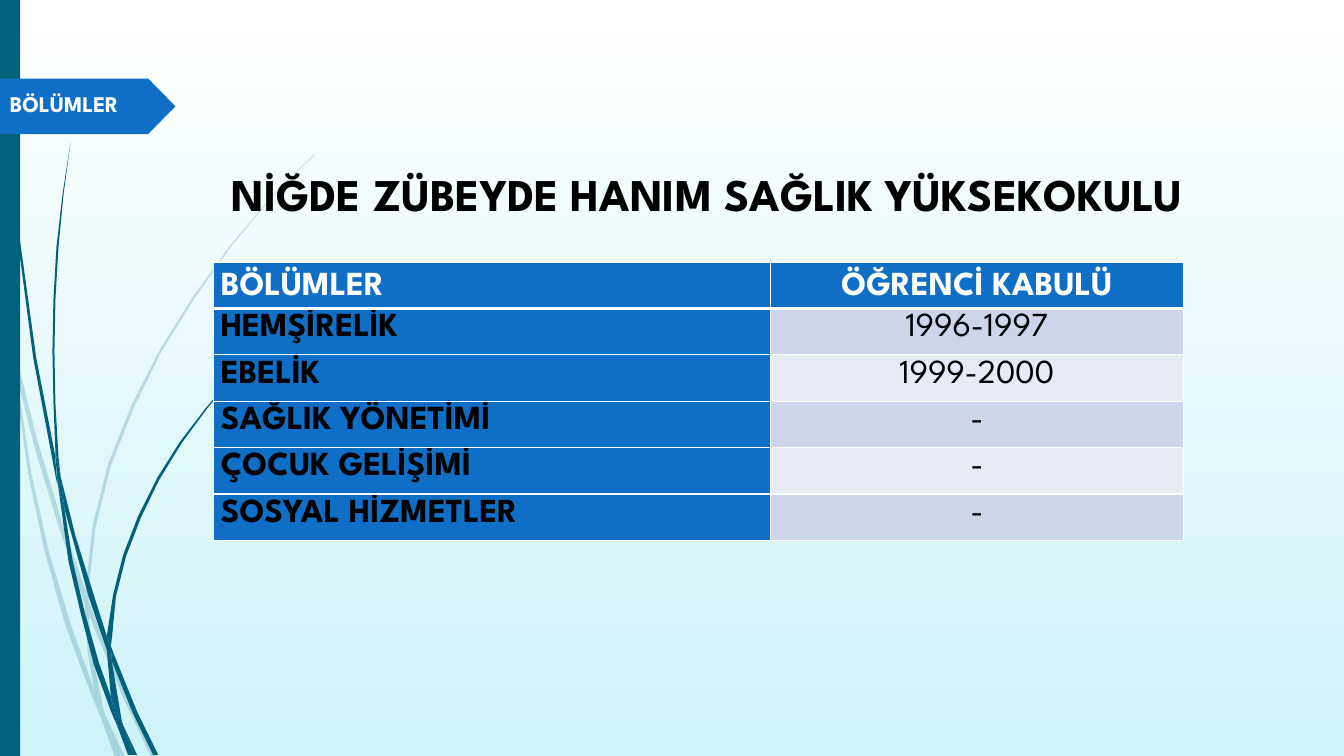
from lxml import etree
from pptx import Presentation
from pptx.dml.color import RGBColor
from pptx.enum.shapes import MSO_SHAPE
from pptx.enum.text import MSO_ANCHOR, PP_ALIGN
from pptx.oxml.ns import qn
from pptx.util import Inches, Pt

RECTANGLE = MSO_SHAPE.RECTANGLE
MIDDLE, TOP = MSO_ANCHOR.MIDDLE, MSO_ANCHOR.TOP
LEFT, CENTER, JUSTIFY = PP_ALIGN.LEFT, PP_ALIGN.CENTER, PP_ALIGN.JUSTIFY
FONT = "League Spartan"
TEAL, BLUE, WHITE, BLACK = "04617B", "0F6FC6", "FFFFFF", "000000"
BANDS = ("CCD5EA", "E7EBF5")

HEADER = ("BÖLÜMLER", "ÖĞRENCİ KABULÜ")
DEPARTMENTS = [
    ("HEMŞİRELİK ", "1996-1997"),
    ("EBELİK ", "1999-2000"),
    ("SAĞLIK YÖNETİMİ ", "-"),
    ("ÇOCUK GELİŞİMİ", "-"),
    ("SOSYAL HİZMETLER", "-"),
]

PALE_WISPS = [
    [(0.11, 3.5), (0.09, 3.22), (0, 2.82), (0, 2.99), (0.1, 3.44)],
    [(0.58, 5.22), (0.84, 5.99), (0.85, 5.86), (0.62, 5.2), (0.36, 4.33), (0.14, 3.45),
     (0.17, 3.76), (0.36, 4.5)],
    [(0.92, 6.07), (0.88, 5.96), (0.88, 6.1), (1.23, 6.94), (1.5, 7.51), (1.55, 7.51),
     (1.27, 6.92)],
    [(1.19, 7.51), (1.24, 7.51), (1.05, 7.11)],
    [(0.93, 6.83), (0.7, 6.19), (0.48, 5.45), (0.31, 4.69), (0.17, 3.76), (0.11, 3.5),
     (0.28, 4.7), (0.44, 5.46), (0.65, 6.21), (0.92, 6.93), (1.01, 7.14), (0.99, 7.07)],
    [(0.84, 5.99), (0.87, 6.46), (0.93, 6.83), (0.96, 6.92), (1.05, 7.11), (1.03, 7.06),
     (0.91, 6.46), (0.88, 6.1), (0.88, 6.08)],
    [(0.88, 5.84), (0.95, 5.22), (1.1, 4.62), (1.33, 4.04), (1.6, 3.49), (1.93, 2.96),
     (2.29, 2.45), (2.68, 1.98), (2.9, 1.75), (3.12, 1.54), (3.12, 1.53), (2.89, 1.75),
     (2.68, 1.97), (2.28, 2.44), (1.91, 2.95), (1.58, 3.48), (1.3, 4.03), (1.07, 4.61),
     (0.92, 5.21), (0.85, 5.84), (0.85, 5.86), (0.88, 5.96)],
    [(1.01, 7.14), (1.14, 7.51), (1.19, 7.51)],
    [(0.88, 6.08), (0.88, 6.1), (0.88, 5.96), (0.85, 5.86), (0.84, 5.99)],
    [(0.96, 6.92), (0.93, 6.83), (0.99, 7.07), (1.01, 7.14), (1.19, 7.51), (1.05, 7.11)],
]

DARK_WISPS = [
    [(0.07, 1.1), (0.17, 2.33), (0.33, 3.55), (0.56, 4.77), (0.57, 4.81), (0.55, 4.57),
     (0.55, 4.53), (0.36, 3.55), (0.19, 2.32), (0.08, 1.09), (0.05, 0.48), (0.04, 0),
     (0.03, 0), (0.04, 0.48)],
    [(0.88, 5.92), (1.06, 6.45), (1.06, 6.31), (0.93, 5.9), (0.75, 5.32), (0.6, 4.72),
     (0.64, 5.05)],
    [(1.13, 6.49), (1.1, 6.41), (1.11, 6.56), (1.32, 7.08), (1.52, 7.49), (1.57, 7.49),
     (1.36, 7.06)],
    [(1.1, 6.91), (0.98, 6.57), (0.84, 6.07), (0.72, 5.56), (0.64, 5.05), (0.57, 4.77),
     (0.68, 5.57), (0.8, 6.08), (0.93, 6.59), (1.11, 7.08), (1.17, 7.22), (1.16, 7.17)],
    [(0.6, 4.72), (0.58, 4.53), (0.55, 4.01), (0.54, 3.49), (0.55, 2.97), (0.58, 2.45),
     (0.63, 1.93), (0.7, 1.41), (0.62, 1.93), (0.56, 2.45), (0.53, 2.97), (0.52, 3.49),
     (0.53, 3.99), (0.55, 4.49)],
    [(1.33, 7.49), (1.36, 7.49), (1.22, 7.19)],
    [(0.57, 4.77), (0.64, 5.05), (0.6, 4.72), (0.55, 4.49), (0.55, 4.53)],
    [(1.11, 6.33), (1.15, 5.92), (1.25, 5.52), (1.4, 5.13), (1.58, 4.76), (1.8, 4.4),
     (2.05, 4.06), (2.31, 3.74), (2.45, 3.59), (2.61, 3.44), (2.6, 3.44), (2.45, 3.58),
     (2.31, 3.73), (2.04, 4.05), (1.78, 4.39), (1.56, 4.74), (1.37, 5.12), (1.22, 5.51),
     (1.12, 5.91), (1.06, 6.31), (1.1, 6.41)],
    [(1.17, 7.22), (1.27, 7.49), (1.31, 7.49)],
    [(1.06, 6.45), (1.1, 6.91), (1.16, 7.06), (1.22, 7.19), (1.21, 7.16), (1.11, 6.56),
     (1.09, 6.51)],
    [(1.06, 6.45), (1.09, 6.51), (1.11, 6.56), (1.1, 6.41), (1.06, 6.31)],
    [(1.16, 7.06), (1.1, 6.91), (1.16, 7.17), (1.17, 7.22), (1.3, 7.49), (1.33, 7.49),
     (1.22, 7.19)],
]


def color(hex_code):
    """Turn a hex string into a colour."""
    return RGBColor.from_string(hex_code)


def paint(sp, fill):
    """Give a shape a flat fill without line or shadow."""
    sp.shadow.inherit = False
    sp.fill.solid()
    sp.fill.fore_color.rgb = color(fill)
    sp.line.fill.background()


def write(p, text, size, ink, bold, align):
    """Write one run into a paragraph."""
    p.alignment = align
    r = p.add_run()
    r.text = text
    r.font.name, r.font.size, r.font.bold = FONT, Pt(size), bold
    r.font.color.rgb = color(ink)


def add_outline(s, x, y, points, fill):
    """Draw a closed, filled outline offset by x and y."""
    spots = [(Inches(x + px), Inches(y + py)) for px, py in points]
    builder = s.shapes.build_freeform(*spots[0])
    builder.add_line_segments(spots[1:], close=True)
    sp = builder.convert_to_shape()
    paint(sp, fill)
    return sp


def add_wisps(s, x, y, wisps, opacity=100):
    """Draw a bundle of blades of grass."""
    for points in wisps:
        sp = add_outline(s, x, y, points, TEAL)
        if opacity < 100:
            clr = sp.element.spPr.find(qn("a:solidFill"))[0]
            etree.SubElement(clr, qn("a:alpha"), val=str(opacity * 1000))


def add_text(s, x, y, w, h, text, size, ink, align):
    """Place a line of bold text in a box."""
    tf = s.shapes.add_textbox(Inches(x), Inches(y), Inches(w), Inches(h)).text_frame
    tf.word_wrap = True
    tf.vertical_anchor = MIDDLE
    write(tf.paragraphs[0], text, size, ink, True, align)


def add_tag(s, x, y, w, h):
    """Draw the arrow tag with the section name."""
    neck = w - 0.27
    add_outline(s, x, y, [(0, 0), (neck, 0), (w, h / 2), (neck, h), (0, h)], BLUE)
    add_text(s, x, y + 0.06, w - 0.05, 0.37, "BÖLÜMLER", 16, WHITE, LEFT)


def set_borders(cell, top, bottom):
    """Draw white cell borders with the given top and bottom widths."""
    tc_pr = cell._tc.get_or_add_tcPr()
    sides = (("L", 1), ("R", 1), ("T", top), ("B", bottom))
    for i, (side, width) in enumerate(sides):
        ln = etree.Element(qn("a:ln" + side), w=str(Pt(width)))
        fill = etree.SubElement(ln, qn("a:solidFill"))
        etree.SubElement(fill, qn("a:srgbClr"), val=WHITE)
        tc_pr.insert(i, ln)


def add_departments(s, x, y, widths, header_h, row_h):
    """Build the table of departments and first intake years."""
    rows = [HEADER, *DEPARTMENTS]
    height = header_h + row_h * len(DEPARTMENTS)
    table = s.shapes.add_table(len(rows), len(widths), Inches(x), Inches(y),
                               Inches(sum(widths)), Inches(height)).table
    for column, width in zip(table.columns, widths):
        column.width = Inches(width)
    for i, texts in enumerate(rows):
        head = i == 0
        table.rows[i].height = Inches(header_h if head else row_h)
        for j, text in enumerate(texts):
            cell = table.cell(i, j)
            cell.margin_left = cell.margin_right = Inches(0.07)
            cell.margin_top = cell.margin_bottom = 0
            cell.vertical_anchor = MIDDLE if head else TOP
            cell.fill.solid()
            cell.fill.fore_color.rgb = color(BLUE if head or j == 0 else BANDS[(i - 1) % 2])
            align = CENTER if j else LEFT if head else JUSTIFY
            p = cell.text_frame.paragraphs[0]
            p.line_spacing = 1.15
            write(p, text, 24, WHITE if head else BLACK, head or j == 0, align)
            set_borders(cell, 3 if i == 1 else 1, 3 if head else 1)


def add_backdrop(s, x, y, h):
    """Fill the background and draw the grass and side bar."""
    fill = s.background.fill
    fill.gradient()
    fill.gradient_angle = 270
    for stop, hex_code in zip(fill.gradient_stops, (WHITE, "CEF3F9")):
        stop.color.rgb = color(hex_code)
    add_wisps(s, x, y, PALE_WISPS, 20)
    add_wisps(s, x, y, DARK_WISPS)
    bar = s.shapes.add_shape(RECTANGLE, Inches(x), Inches(y), Inches(0.2), Inches(h))
    paint(bar, TEAL)


def main():
    """Build and save the slide."""
    prs = Presentation()
    prs.slide_width, prs.slide_height = Inches(13.33), Inches(7.5)
    s = prs.slides.add_slide(prs.slide_layouts[6])
    add_backdrop(s, 0, 0, 7.5)
    add_tag(s, 0, 0.78, 1.74, 0.55)
    add_text(s, 1.99, 1.55, 10.17, 0.74, "NİĞDE ZÜBEYDE HANIM SAĞLIK YÜKSEKOKULU ",
             32.4, BLACK, CENTER)
    add_departments(s, 2.12, 2.6, (5.52, 4.1), 0.36, 0.31)
    prs.save("out.pptx")


if __name__ == "__main__":
    main()
